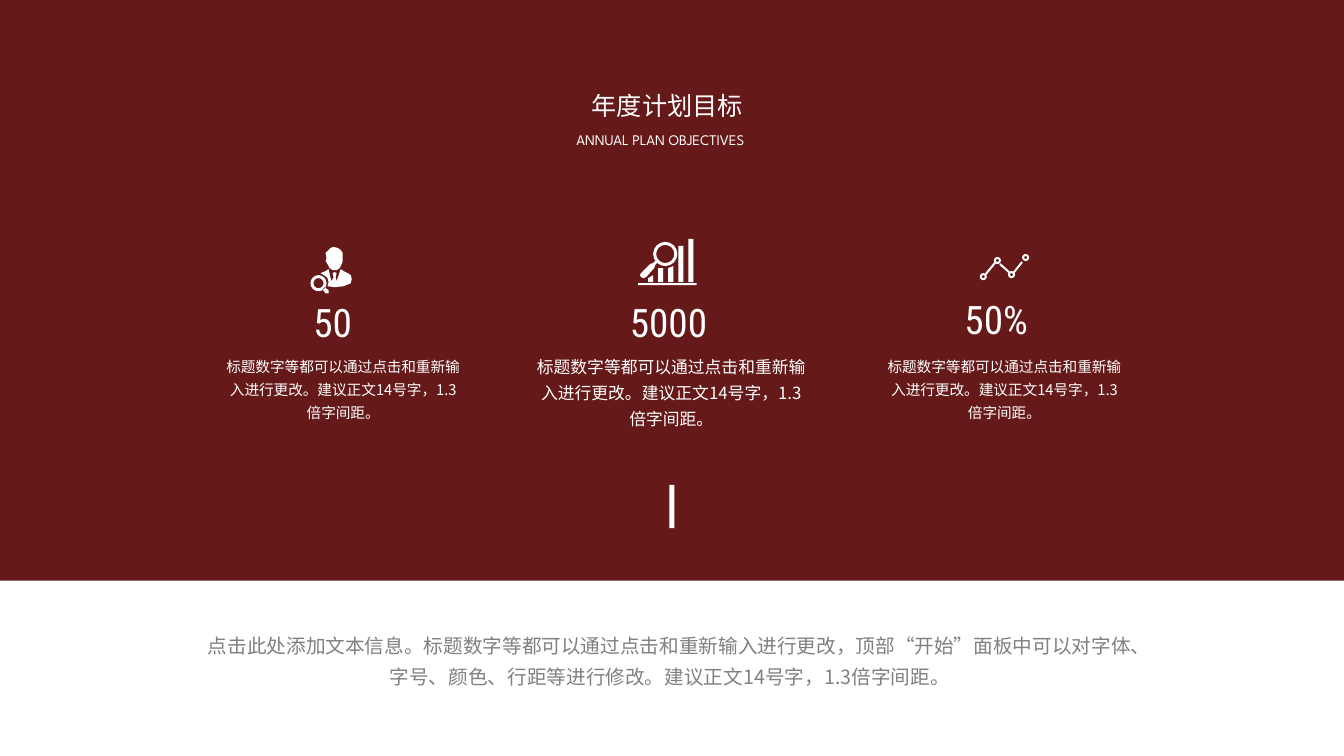
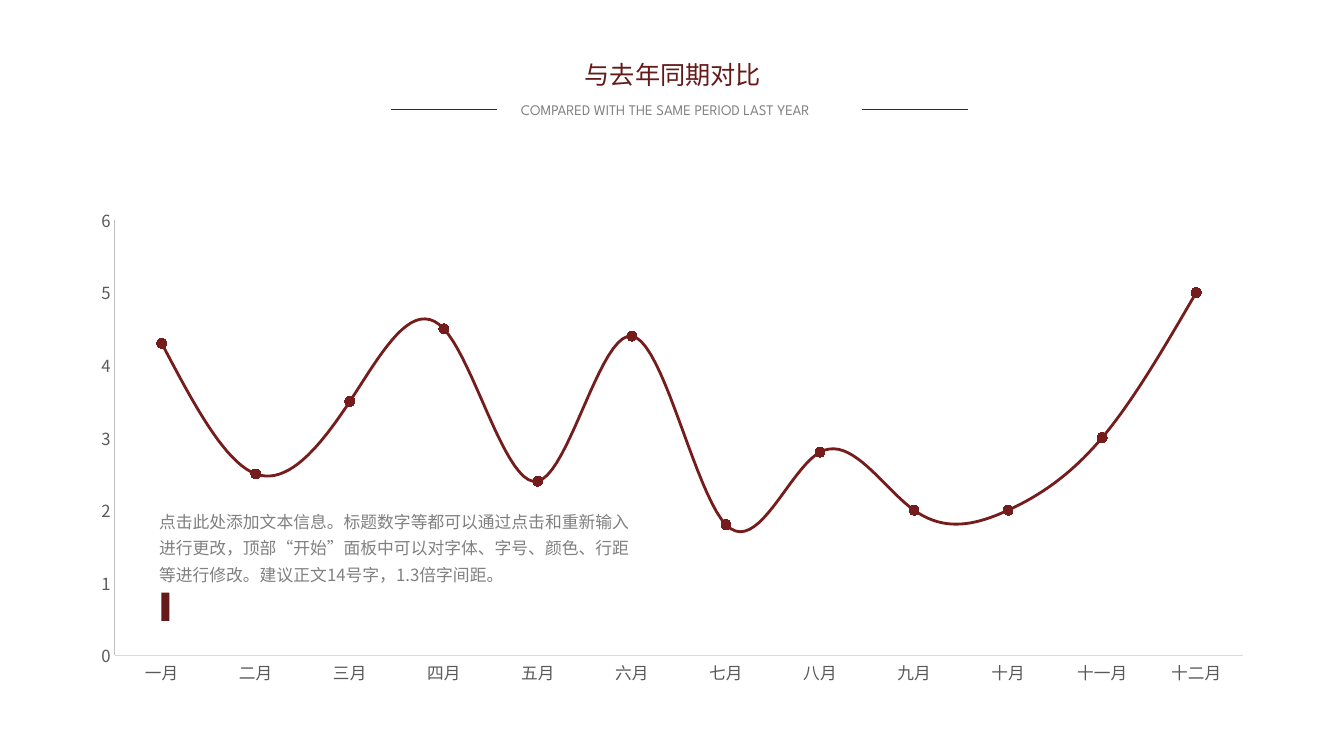
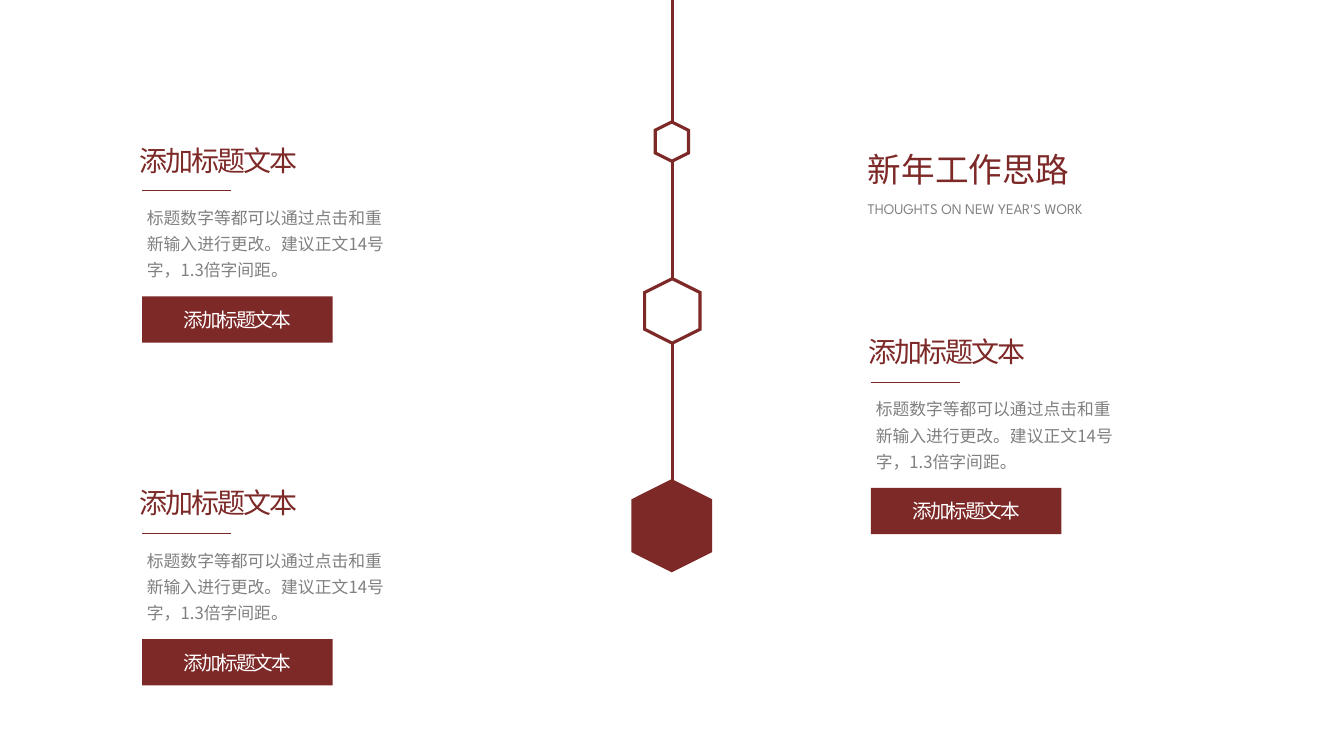
import math

import lxml.etree
import pptx
import pptx.chart.data
import pptx.dml.color
import pptx.enum.chart
import pptx.enum.shapes
import pptx.enum.text
import pptx.oxml.ns
import pptx.util

EMU_PER_PX = 9144
SLIDE_WIDTH = 12192000
BURGUNDY = "651919"
BRICK = "7D2927"
CHART_RED = "751D1C"
GRAY = "808080"
WHITE = "FFFFFF"
CHINESE = "Noto Sans CJK SC"
ENGLISH = "League Spartan"
NUMERALS = "Roboto Condensed"
LEFT = pptx.enum.text.PP_ALIGN.LEFT
CENTER = pptx.enum.text.PP_ALIGN.CENTER
TOP = pptx.enum.text.MSO_ANCHOR.TOP
MIDDLE = pptx.enum.text.MSO_ANCHOR.MIDDLE
SHAPES = pptx.enum.shapes.MSO_SHAPE

ADVICE = "标题数字等都可以通过点击和重新输入进行更改。建议正文14号字，1.3倍字间距。"
LONG_ADVICE = (
    "点击此处添加文本信息。标题数字等都可以通过点击和重新输入进行更改，"
    "顶部“开始”面板中可以对字体、字号、颜色、行距等进行修改。"
    "建议正文14号字，1.3倍字间距。"
)
CARD_LABEL = "添加标题文本"


def px(*lengths):
    """Turn px lengths into a list of EMU."""
    return [pptx.util.Emu(round(length * EMU_PER_PX)) for length in lengths]


def rgb(color):
    """Turn a hex string into a colour."""
    return pptx.dml.color.RGBColor.from_string(color)


def set_attributes(target, values):
    """Set every attribute named in values on target."""
    for name, value in values.items():
        setattr(target, name, value)


def add_east_asian_font(latin):
    """Repeat a latin typeface for East Asian characters."""
    east_asian = lxml.etree.Element(pptx.oxml.ns.qn("a:ea"), typeface=latin.get("typeface"))
    latin.addnext(east_asian)


def write(shape, text, size, color, font=CHINESE, align=LEFT, anchor=TOP, spacing=1.0, tracking=0):
    """Put one formatted paragraph into a shape."""
    frame = shape.text_frame
    set_attributes(frame, {
        "word_wrap": True,
        "auto_size": pptx.enum.text.MSO_AUTO_SIZE.NONE,
        "vertical_anchor": anchor,
    })
    paragraph = frame.paragraphs[0]
    set_attributes(paragraph, {"alignment": align, "line_spacing": spacing})
    run = paragraph.add_run()
    run.text = text
    set_attributes(run.font, {"name": font, "size": pptx.util.Pt(size)})
    run.font.color.rgb = rgb(color)
    properties = run._r.get_or_add_rPr()
    properties.set("lang", "zh-CN")
    if tracking:
        properties.set("spc", str(tracking))
    add_east_asian_font(properties.find(pptx.oxml.ns.qn("a:latin")))


def add_text(slide, box, text, size, color, **style):
    """Add a text box."""
    write(slide.shapes.add_textbox(*px(*box)), text, size, color, **style)


def add_headings(slide, title_box, title, size, color, subtitle_box, subtitle, subtitle_color):
    """Fill the title placeholder and add the English line under it."""
    placeholder = slide.shapes.title
    placeholder.element.getparent().append(placeholder.element)
    set_attributes(placeholder, dict(zip(("left", "top", "width", "height"), px(*title_box))))
    write(placeholder, title, size, color)
    add_text(slide, subtitle_box, subtitle, 10.5, subtitle_color, font=ENGLISH)


def paint(shape, fill, line=None, weight=2.25):
    """Give a shape a flat fill and an optional sharp-cornered outline."""
    shape.shadow.inherit = False
    shape.fill.solid()
    shape.fill.fore_color.rgb = rgb(fill)
    if line:
        shape.line.color.rgb = rgb(line)
        shape.line.width = pptx.util.Pt(weight)
        outline = shape.element.spPr.find(pptx.oxml.ns.qn("a:ln"))
        lxml.etree.SubElement(outline, pptx.oxml.ns.qn("a:miter"), lim="800000")
    else:
        shape.line.fill.background()


def add_shape(slide, preset, box, fill, line=None, rotation=0):
    """Add a flat preset shape."""
    shape = slide.shapes.add_shape(preset, *px(*box))
    paint(shape, fill, line)
    shape.rotation = rotation
    return shape


def add_icon(slide, contours):
    """Add one white freeform made of closed contours."""
    first, *others = [[px(*point) for point in contour] for contour in contours]
    builder = slide.shapes.build_freeform(*first[0], scale=1)
    builder.add_line_segments(first[1:], close=True)
    for contour in others:
        builder.move_to(*contour[0])
        builder.add_line_segments(contour[1:], close=True)
    paint(builder.convert_to_shape(), WHITE)


def circle(x, y, radius, corners=16):
    """Return points around a circle."""
    angles = [2 * math.pi * index / corners for index in range(corners)]
    return [(x + radius * math.cos(angle), y + radius * math.sin(angle)) for angle in angles]


def stroke(start, end, width):
    """Return the four corners of a thick line."""
    (left, top), (right, bottom) = start, end
    reach = width / 2 / math.dist(start, end)
    across, down = (top - bottom) * reach, (right - left) * reach
    return [(left + across, top + down), (right + across, bottom + down),
            (right - across, bottom - down), (left - across, top - down)]


def add_line(slide, ends, color, weight):
    """Add a straight connector without shadow."""
    connector = slide.shapes.add_connector(pptx.enum.shapes.MSO_CONNECTOR.STRAIGHT, *px(*ends))
    connector.line.color.rgb = rgb(color)
    connector.line.width = pptx.util.Pt(weight)
    lxml.etree.SubElement(connector.element.spPr, pptx.oxml.ns.qn("a:effectLst"))


def add_person_icon(slide):
    """Draw a person with a magnifier."""
    head = [
        (331, 245), (335, 246), (338, 248), (340, 251), (340, 256), (340, 259), (339, 262),
        (337, 266), (334, 268), (330, 268), (327, 266), (325, 262), (323, 259), (324, 256),
        (323, 251), (326, 248), (328, 246),
    ]
    suit = [
        (338, 267), (341, 269), (345, 271), (348, 273), (349, 277), (348, 281), (341, 284),
        (332, 285), (325, 284), (326, 280), (325, 276), (323, 274), (318, 271), (323, 269),
        (326, 267), (328, 276), (329, 279), (331, 275), (330, 271), (332, 270), (334, 271),
        (333, 275), (334, 279), (335, 276),
    ]
    handle = [(322, 285), (326, 288), (326, 291), (323, 291), (320, 287)]
    add_icon(slide, [head, suit, circle(316, 281, 8), circle(316, 281, 5), handle])


def add_analysis_icon(slide):
    """Draw growing bars under a magnifier."""
    bar_tops = ((276, 273), (266, 266), (266, 264), (244, 244), (237, 237))
    bars = [
        [(643 + 10 * index, left_top), (648 + 10 * index, right_top),
         (648 + 10 * index, 280), (643 + 10 * index, 280)]
        for index, (left_top, right_top) in enumerate(bar_tops)
    ]
    base = [(633, 281), (691, 281), (691, 283), (633, 283)]
    handle = [
        (650, 259), (652, 261), (650, 263), (649, 266), (641, 275),
        (638, 276), (636, 275), (635, 273), (636, 271), (645, 262), (648, 261),
    ]
    add_icon(slide, [base, *bars, circle(660, 252, 12), circle(660, 252, 9), handle])


def add_trend_icon(slide):
    """Draw four rings joined by lines."""
    centers = ((975.5, 274.5), (989.5, 258.5), (1003.5, 272.5), (1017.5, 255.5))
    rings = [circle(*center, radius, 12) for center in centers for radius in (3.5, 1.5)]
    spans = (((978, 272), (987, 261)), ((992, 262), (1001, 270)), ((1006, 270), (1014, 260)))
    add_icon(slide, rings + [stroke(start, end, 2) for start, end in spans])


def add_metric(slide, number, number_spot, text_box, text_size):
    """Add a large figure with its explanation."""
    add_text(slide, (*number_spot, 131, 57), number, 28, WHITE, font=NUMERALS)
    add_text(slide, text_box, ADVICE, text_size, WHITE, align=CENTER, spacing=1.3)


def add_card(slide, left, top):
    """Add a heading, rule, text and button."""
    add_text(slide, (left, top, 227, 44), CARD_LABEL, 20, BRICK, align=CENTER, tracking=-150)
    add_line(slide, (left + 38, top + 52, left + 126, top + 52), BRICK, 0.5)
    add_text(slide, (left + 33, top + 58, 267, 86), ADVICE, 12, GRAY, spacing=1.3)
    button = add_shape(slide, SHAPES.RECTANGLE, (left + 38, top + 157, 189, 46), BRICK)
    write(button, CARD_LABEL, 14, WHITE, align=CENTER, anchor=MIDDLE, tracking=-150)


def style_axis(axis, color):
    """Format an axis without gridlines or ticks."""
    set_attributes(axis, {
        "has_major_gridlines": False,
        "major_tick_mark": pptx.enum.chart.XL_TICK_MARK.NONE,
        "minor_tick_mark": pptx.enum.chart.XL_TICK_MARK.NONE,
    })
    set_attributes(axis.tick_labels.font, {"name": CHINESE, "size": pptx.util.Pt(11.9)})
    axis.tick_labels.font.color.rgb = rgb("595959")
    axis.format.line.color.rgb = rgb(color)
    axis.format.line.width = pptx.util.Pt(0.75)


def add_month_chart(slide, box):
    """Add the smooth monthly line chart."""
    data = pptx.chart.data.CategoryChartData()
    data.categories = [f"{month}月" for month in "一 二 三 四 五 六 七 八 九 十 十一 十二".split()]
    data.add_series("Series 1", (4.3, 2.5, 3.5, 4.5, 2.4, 4.4, 1.8, 2.8, 2, 2, 3, 5))
    kind = pptx.enum.chart.XL_CHART_TYPE.LINE_MARKERS_STACKED
    chart = slide.shapes.add_chart(kind, *px(*box), data).chart
    set_attributes(chart, {"has_title": False, "has_legend": False})
    set_attributes(chart.font, {"name": CHINESE, "size": pptx.util.Pt(10)})
    style_axis(chart.category_axis, "D9D9D9")
    style_axis(chart.value_axis, "BFBFBF")
    set_attributes(chart.value_axis, {"minimum_scale": 0, "maximum_scale": 6, "major_unit": 1})
    chart.plots[0].vary_by_categories = False
    series = chart.plots[0].series[0]
    series.smooth = True
    series.format.line.color.rgb = rgb(CHART_RED)
    series.format.line.width = pptx.util.Pt(2)
    marker = series.marker
    set_attributes(marker, {"style": pptx.enum.chart.XL_MARKER_STYLE.CIRCLE, "size": 7})
    marker.format.fill.solid()
    marker.format.fill.fore_color.rgb = rgb(CHART_RED)
    marker.format.line.color.rgb = rgb(CHART_RED)
    for latin in list(chart._chartSpace.iter(pptx.oxml.ns.qn("a:latin"))):
        add_east_asian_font(latin)


def build_goals(slide):
    """Build the annual goals slide."""
    add_shape(slide, SHAPES.RECTANGLE, (0, 0, 1334, 576), BURGUNDY)
    add_headings(slide, (577, 85, 290, 40), "年度计划目标", 18, WHITE,
                 (562, 125, 209, 28), "ANNUAL PLAN OBJECTIVES", WHITE)
    add_analysis_icon(slide)
    add_metric(slide, "5000", (615, 291), (521, 343, 290, 86), 12)
    add_trend_icon(slide)
    add_metric(slide, "50%", (947, 288), (869, 345, 255, 77), 10.5)
    add_person_icon(slide)
    add_metric(slide, "50", (301, 291), (213, 345, 255, 77), 10.5)
    add_shape(slide, SHAPES.RECTANGLE, (664, 481, 5, 43), WHITE)
    add_text(slide, (196, 617, 937, 69), LONG_ADVICE, 14, GRAY, align=CENTER, spacing=1.3)


def build_comparison(slide):
    """Build the year comparison slide."""
    add_headings(slide, (570, 54, 222, 40), "与去年同期对比", 18, BURGUNDY,
                 (507, 95, 348, 28), "COMPARED WITH THE SAME PERIOD LAST YEAR", GRAY)
    for left in (388, 855):
        add_line(slide, (left, 109, left + 105, 109), BURGUNDY, 0.5)
    add_month_chart(slide, (77, 196, 1180, 493))
    add_text(slide, (148, 497, 496, 86), LONG_ADVICE, 12, GRAY, spacing=1.3)
    add_shape(slide, SHAPES.RECTANGLE, (160, 588, 8, 28), BURGUNDY)


def build_ideas(slide):
    """Build the new year ideas slide."""
    add_line(slide, (667, 0, 667, 553), BRICK, 2.25)
    hexagons = (((647, 124, 39, 33), WHITE), ((635, 281, 64, 55), WHITE), ((622, 483, 89, 77), BRICK))
    for box, fill in hexagons:
        add_shape(slide, SHAPES.HEXAGON, box, fill, line=BRICK, rotation=90)
    add_headings(slide, (851, 143, 342, 50), "新年工作思路", 24, BRICK,
                 (851, 193, 260, 28), "THOUGHTS ON NEW YEAR'S WORK", GRAY)
    for left, top in ((103, 137), (103, 477), (826, 327)):
        add_card(slide, left, top)


def main():
    """Build and save the presentation."""
    presentation = pptx.Presentation()
    presentation.slide_width = pptx.util.Emu(SLIDE_WIDTH)
    presentation.slide_height = px(750)[0]
    title_only = presentation.slide_layouts[5]
    for build in (build_goals, build_comparison, build_ideas):
        build(presentation.slides.add_slide(title_only))
    presentation.save("out.pptx")


if __name__ == "__main__":
    main()
